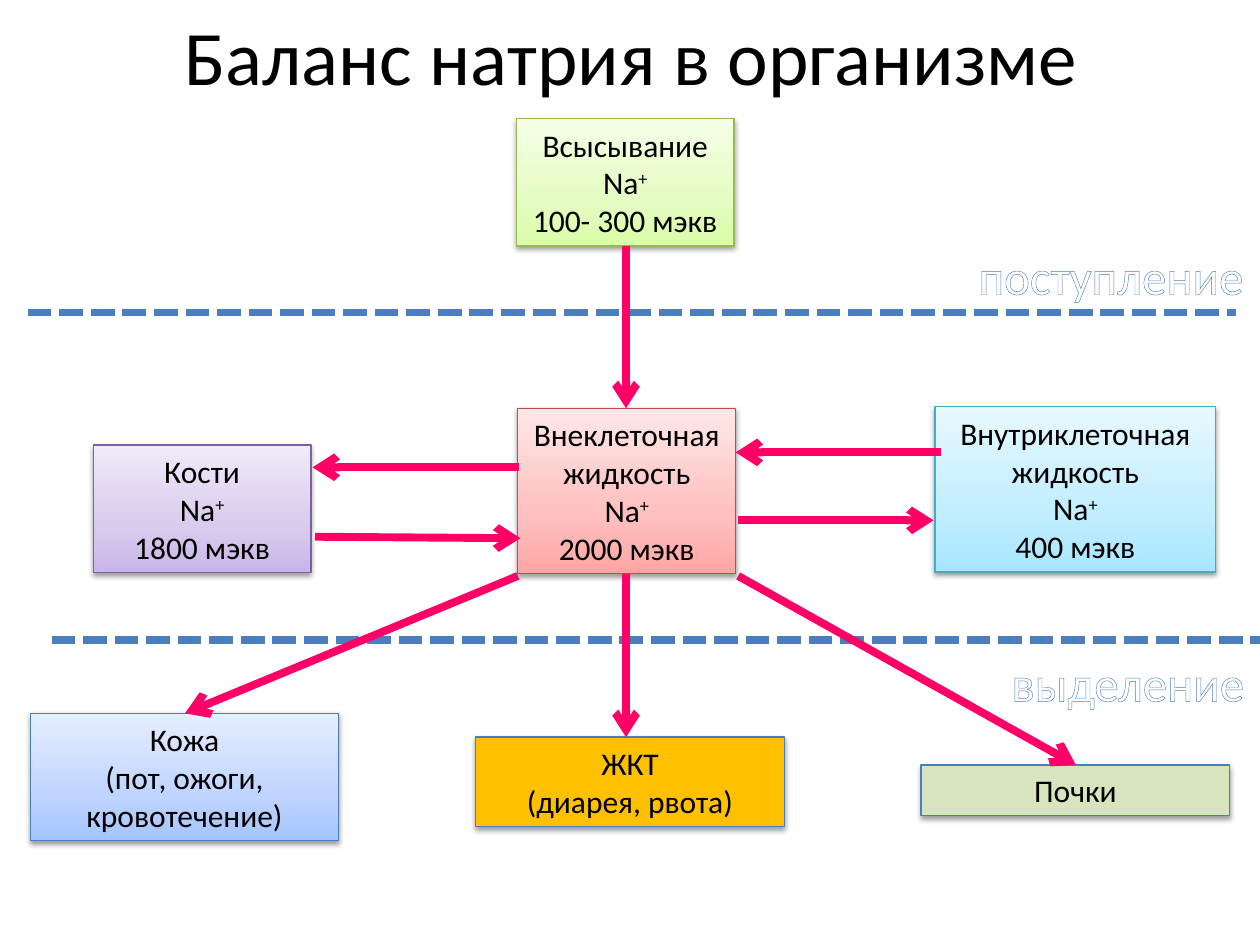
from copy import deepcopy

from lxml import etree
from pptx import Presentation
from pptx.dml.color import RGBColor
from pptx.enum.dml import MSO_LINE
from pptx.enum.shapes import MSO_CONNECTOR, MSO_SHAPE
from pptx.enum.text import MSO_ANCHOR, PP_ALIGN
from pptx.oxml.ns import qn
from pptx.util import Cm, Pt

LINE = MSO_CONNECTOR.STRAIGHT
RECT = MSO_SHAPE.RECTANGLE
DASH = MSO_LINE.SQUARE_DOT
MIDDLE = MSO_ANCHOR.MIDDLE
CENTER = PP_ALIGN.CENTER
FONT = "Calibri"

# Box fills run from the bottom up
COLORS = {
    "text": "000000", "label": "FFFFFF", "rim": "4F81BD",
    "border": "4B7EBC", "arrow": "FF0066", "shadow": "000000",
    "green": ("DAFDA7", "E4FCC2", "F5FFE7"), "green line": "98B955",
    "violet": ("C9B5E8", "D8CBEE", "F0EAF9"), "violet line": "7D60A0",
    "red": ("FFA6A5", "FFC0BF", "FFE7E7"), "red line": "BF4C48",
    "cyan": ("A7E6FF", "C1EDFF", "E7F8FF"), "cyan line": "46AAC5",
    "blue": ("A4C4FF", "BFD4FF", "E6EEFF"),
    "amber": ("FFC000",), "olive": ("D7E4BD",),
}
STOPS = (0, 0.35, 1)


def rgb(name):
    return RGBColor.from_string(COLORS[name])


def node(parent, tag, **attrs):
    return etree.SubElement(parent, qn(tag), attrs)


def style(para, size, color="text"):
    para.alignment = CENTER
    para.font.name = FONT
    para.font.size = Pt(size)
    para.font.color.rgb = rgb(color)


def paint(shape, tones):
    """Fill with one tone, or with a vertical gradient of three."""
    fill = shape.fill
    if len(tones) == 1:
        fill.solid()
        fill.fore_color.rgb = RGBColor.from_string(tones[0])
        return
    fill.gradient()
    fill.gradient_angle = 90
    stops = shape._element.spPr.find(".//" + qn("a:gsLst"))
    stops.append(deepcopy(stops[0]))
    for stop, pos, tone in zip(fill.gradient_stops, STOPS, tones):
        stop.position = pos
        stop.color.rgb = RGBColor.from_string(tone)


def shade(shape):
    shape.shadow.inherit = False
    effects = shape._element.spPr.find(qn("a:effectLst"))
    drop = node(effects, "a:outerShdw", blurRad=str(Pt(3.1)),
                dist=str(Pt(1.6)), dir="5400000", rotWithShape="0")
    tone = node(drop, "a:srgbClr", val=COLORS["shadow"])
    node(tone, "a:alpha", val="38000")


def card(slide, box, fill, line, rows):
    """Box of centred rows; what follows ^ is superscript."""
    shape = slide.shapes.add_shape(RECT, *map(Cm, box))
    shape._element.remove(shape._element.find(qn("p:style")))
    paint(shape, COLORS[fill])
    shape.line.color.rgb = rgb(line)
    shape.line.width = Pt(0.75)
    shade(shape)
    frame = shape.text_frame
    frame.word_wrap = True
    frame.vertical_anchor = MIDDLE
    for i, row in enumerate(rows):
        para = frame.add_paragraph() if i else frame.paragraphs[0]
        style(para, 18)
        base, _, power = row.partition("^")
        para.add_run().text = base
        if power:
            run = para.add_run()
            run.text = power
            run._r.get_or_add_rPr().set("baseline", "30000")


def stroke(slide, ends, color):
    line = slide.shapes.add_connector(LINE, *map(Cm, ends))
    line.line.color.rgb = rgb(color)
    line.line.width = Pt(4.5)
    node(line._element.spPr, "a:effectLst")
    return line


def arrow(slide, *ends):
    line = stroke(slide, ends, "arrow")
    node(line.line._get_or_add_ln(), "a:tailEnd", type="arrow")


def border(slide, x, y, width):
    stroke(slide, (x, y, x + width, y), "border").line.dash_style = DASH


def label(slide, box, text):
    """Outlined name of a zone."""
    frame = slide.shapes.add_textbox(*map(Cm, box)).text_frame
    frame.word_wrap = False
    run = frame.paragraphs[0].add_run()
    run.text = text
    run.font.name = FONT
    run.font.size = Pt(28)
    run.font.color.rgb = rgb("label")
    rim = etree.Element(qn("a:ln"), w=str(Pt(0.8)))
    node(node(rim, "a:solidFill"), "a:srgbClr", val=COLORS["rim"])
    run._r.get_or_add_rPr().insert(0, rim)


def head(slide, box):
    title = slide.shapes.title
    title.left, title.top, title.width, title.height = map(Cm, box)
    title.text_frame.text = "Баланс натрия в организме"
    title.text_frame.vertical_anchor = MIDDLE
    style(title.text_frame.paragraphs[0], 44)


def intake(slide, x, y):
    border(slide, x, y + 3.91, 24.36)
    label(slide, (x + 18.92, y + 2.44, 5.92, 1.45), "поступление")
    card(slide, (x + 9.85, y, 4.39, 2.57), "green", "green line",
         ("Всысывание Na^+", "100- 300 мэкв"))


def stores(slide, x, y):
    card(slide, (x, y + 0.77, 4.39, 2.57), "violet", "violet line",
         ("Кости", "Na^+", "1800 мэкв"))
    card(slide, (x + 8.56, y + 0.03, 4.39, 3.33), "red", "red line",
         ("Внеклеточная жидкость", "Na^+", "2000 мэкв"))
    card(slide, (x + 16.97, y, 5.66, 3.33), "cyan", "cyan line",
         ("Внутриклеточная жидкость", "Na^+", "400 мэкв"))


def losses(slide, x, y):
    border(slide, x + 0.43, y, 24.36)
    label(slide, (x + 19.53, y + 0.13, 5.26, 1.45), "выделение")
    exits = (
        (1.48, 2.57, "blue", ("Кожа", "(пот, ожоги, кровотечение)")),
        (1.96, 1.8, "amber", ("ЖКТ", "(диарея, рвота)")),
        (2.52, 1.02, "olive", ("Почки",)),
    )
    for i, (top, height, fill, rows) in enumerate(exits):
        card(slide, (x + i * 8.98, y + top, 6.22, height),
             fill, "border", rows)


def flows(slide, x, y):
    """Arrows around the central box, whose top left corner is x, y."""
    mid = x + 2.18
    arrow(slide, x + 8.53, y + 0.89, x + 4.39, y + 0.89)
    arrow(slide, x + 4.44, y + 2.26, x + 8.38, y + 2.26)
    arrow(slide, x + 0.02, y + 1.19, x - 4.14, y + 1.19)
    arrow(slide, x - 4.09, y + 2.59, x + 0.05, y + 2.62)
    arrow(slide, mid, y - 3.28, mid, y)
    arrow(slide, mid, y + 3.35, mid, y + 6.63)
    arrow(slide, x, y + 3.38, x - 6.71, y + 6.15)
    arrow(slide, x + 4.44, y + 3.38, x + 11.25, y + 7.19)


def main():
    deck = Presentation()
    deck.slide_width, deck.slide_height = Cm(25.4), Cm(19.05)
    slide = deck.slides.add_slide(deck.slide_layouts[5])
    head(slide, (1.3, 0, 22.86, 2.2))
    intake(slide, 0.56, 2.39)
    stores(slide, 1.88, 8.2)
    losses(slide, 0.61, 12.9)
    flows(slide, 10.44, 8.23)
    deck.save("out.pptx")


if __name__ == "__main__":
    main()
